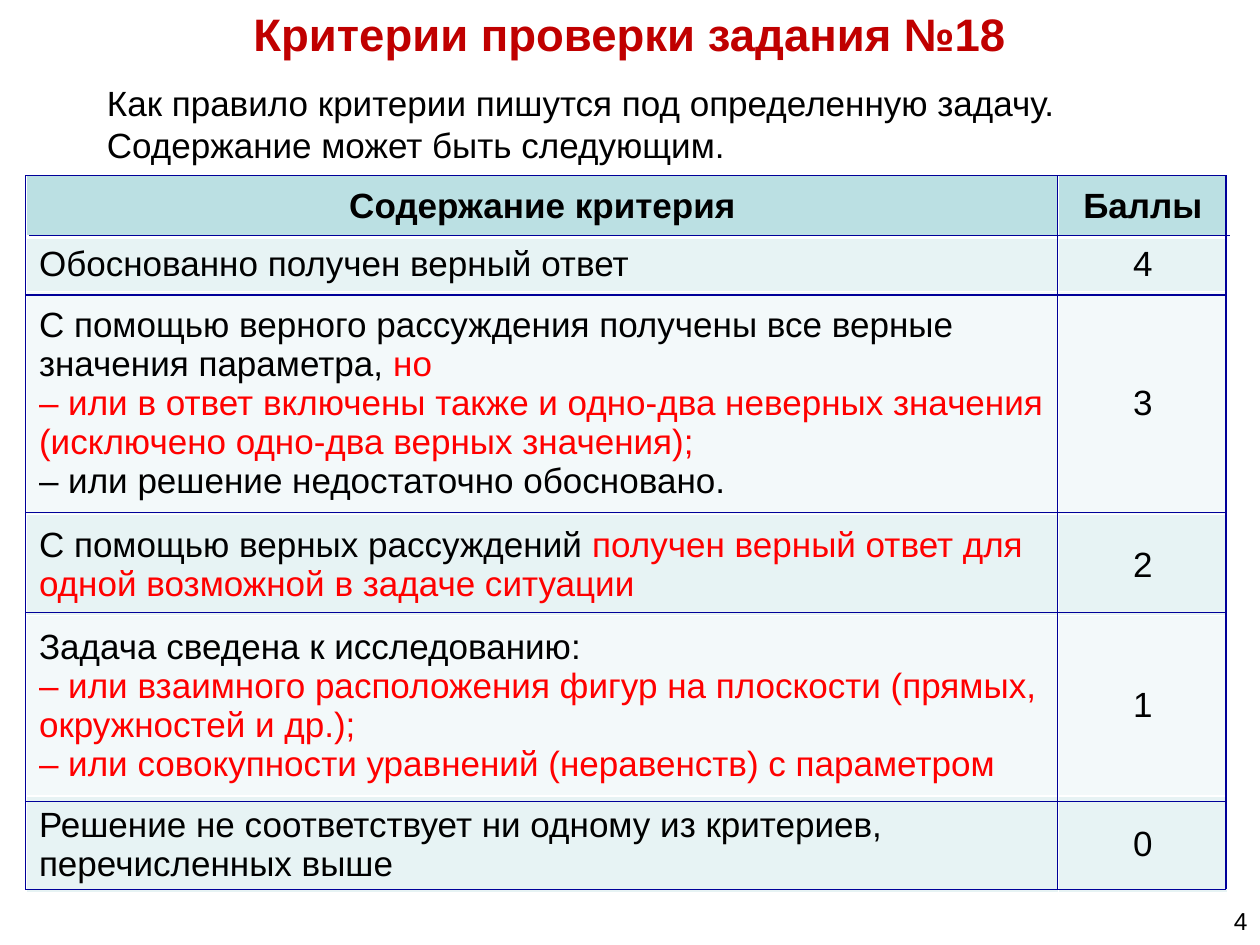
from lxml import etree
from pptx import Presentation
from pptx.dml.color import RGBColor
from pptx.enum import shapes, text
from pptx.oxml import ns
from pptx.util import Pt

BLACK = RGBColor(0x00, 0x00, 0x00)
RED = RGBColor(0xFF, 0x00, 0x00)
DARK_RED = RGBColor(0xC0, 0x00, 0x00)
NAVY = RGBColor(0x00, 0x00, 0x99)
WHITE = RGBColor(0xFF, 0xFF, 0xFF)
HEADER_FILL = RGBColor(0xBB, 0xE0, 0xE3)
BAND_FILLS = (RGBColor(0xF3, 0xF9, 0xFA), RGBColor(0xE7, 0xF3, 0xF4))

LEFT, CENTER, RIGHT = text.PP_ALIGN.LEFT, text.PP_ALIGN.CENTER, text.PP_ALIGN.RIGHT

COLUMN_WIDTHS = (589.7, 96.5)
ROW_HEIGHTS = (35.3, 31, 127.4, 57.6, 103, 55.4)

# Each criterion is a list of paragraphs; each paragraph is a list of (text, colour).
CRITERIA = [
    ([[("Содержание критерия", BLACK)]], "Баллы"),
    ([[("Обоснованно получен верный ответ", BLACK)]], "4"),
    ([[("С помощью верного рассуждения получены все верные значения параметра, ", BLACK),
       ("но", RED)],
      [("– или в ответ включены также и одно-два неверных значения "
        "(исключено одно-два верных значения);", RED)],
      [("– или решение недостаточно обосновано.", BLACK)]], "3"),
    ([[("С помощью верных рассуждений ", BLACK),
       ("получен верный ответ для одной возможной в задаче ситуации", RED)]], "2"),
    ([[("Задача сведена к исследованию:", BLACK)],
      [("– или взаимного расположения фигур на плоскости "
        "(прямых, окружностей и др.);", RED)],
      [("– или совокупности уравнений (неравенств) с параметром", RED)]], "1"),
    ([[("Решение не соответствует ни одному из критериев, перечисленных выше", BLACK)]], "0"),
]

GRID_LEFT, GRID_RIGHT, GRID_TOP, GRID_BOTTOM = 14.4, 700.6, 100.1, 508.3
COLUMN_LINES = (GRID_LEFT, 604.1, GRID_RIGHT)
ROW_LINES = (GRID_TOP, 168.5, 293, 349.9, 457.9, GRID_BOTTOM)
HEADER_LINE, HEADER_SHIFT = 134.6, 2.2


def write(frame, paragraphs, size, align, bold=False):
    for index, spans in enumerate(paragraphs):
        paragraph = frame.paragraphs[0] if index == 0 else frame.add_paragraph()
        paragraph.alignment = align
        paragraph.font.name = "Arial"
        paragraph.font.size = Pt(size)
        paragraph.font.bold = bold
        for words, color in spans:
            span = paragraph.add_run()
            span.text = words
            span.font.color.rgb = color
            span.font.bold = bold


def add_text(page, left, top, width, height, words, size, color=BLACK, align=LEFT, bold=False):
    box = page.shapes.add_textbox(Pt(left), Pt(top), Pt(width), Pt(height))
    box.text_frame.word_wrap = True
    write(box.text_frame, [[(words, color)]], size, align, bold)


def set_borders(cell, top, bottom):
    """Draw white borders, 1 pt at the sides and of the given widths above and below."""
    properties = cell._tc.get_or_add_tcPr()
    for side, width in (("L", 1), ("R", 1), ("T", top), ("B", bottom)):
        line = etree.SubElement(properties, ns.qn(f"a:ln{side}"), w=str(Pt(width)))
        fill = etree.SubElement(line, ns.qn("a:solidFill"))
        etree.SubElement(fill, ns.qn("a:srgbClr"), val=str(WHITE))


def fill_cell(cell, row, paragraphs, align):
    set_borders(cell, 3 if row == 1 else 1, 3 if row == 0 else 1)
    cell.fill.solid()
    cell.fill.fore_color.rgb = BAND_FILLS[row % 2] if row else HEADER_FILL
    cell.vertical_anchor = text.MSO_ANCHOR.MIDDLE
    write(cell.text_frame, paragraphs, 20, align, bold=row == 0)


def add_criteria_table(page):
    frame = page.shapes.add_table(len(ROW_HEIGHTS), len(COLUMN_WIDTHS), Pt(15.1), Pt(100.1),
                                  Pt(sum(COLUMN_WIDTHS)), Pt(sum(ROW_HEIGHTS)))
    table = frame.table
    for column, width in zip(table.columns, COLUMN_WIDTHS):
        column.width = Pt(width)
    for row, (height, (criterion, score)) in enumerate(zip(ROW_HEIGHTS, CRITERIA)):
        table.rows[row].height = Pt(height)
        fill_cell(table.cell(row, 0), row, criterion, LEFT if row else CENTER)
        fill_cell(table.cell(row, 1), row, [[(score, BLACK)]], CENTER)


def add_line(page, *ends):
    line = page.shapes.add_connector(shapes.MSO_CONNECTOR.STRAIGHT, *map(Pt, ends))
    line.line.color.rgb = NAVY
    line.line.width = Pt(0.75)
    etree.SubElement(line._element.spPr, ns.qn("a:effectLst"))


def add_grid(page):
    add_line(page, GRID_LEFT + HEADER_SHIFT, HEADER_LINE, GRID_RIGHT + HEADER_SHIFT, HEADER_LINE)
    for y in ROW_LINES:
        add_line(page, GRID_LEFT, y, GRID_RIGHT, y)
    for x in COLUMN_LINES:
        add_line(page, x, GRID_BOTTOM, x, GRID_TOP)


def main():
    deck = Presentation()
    deck.slide_width, deck.slide_height = Pt(720), Pt(540)
    page = deck.slides.add_slide(deck.slide_layouts[6])
    add_text(page, 552.2, 514, 167.8, 26, "4", 14, align=RIGHT)
    add_criteria_table(page)
    add_text(page, 54, 43.2, 646.6, 55.4,
             "Как правило критерии пишутся под определенную задачу. "
             "Содержание может быть следующим.", 20)
    add_grid(page)
    add_text(page, 0, 0, 720, 38.9, "Критерии проверки задания №18", 26, DARK_RED, CENTER, True)
    deck.save("out.pptx")


if __name__ == "__main__":
    main()
